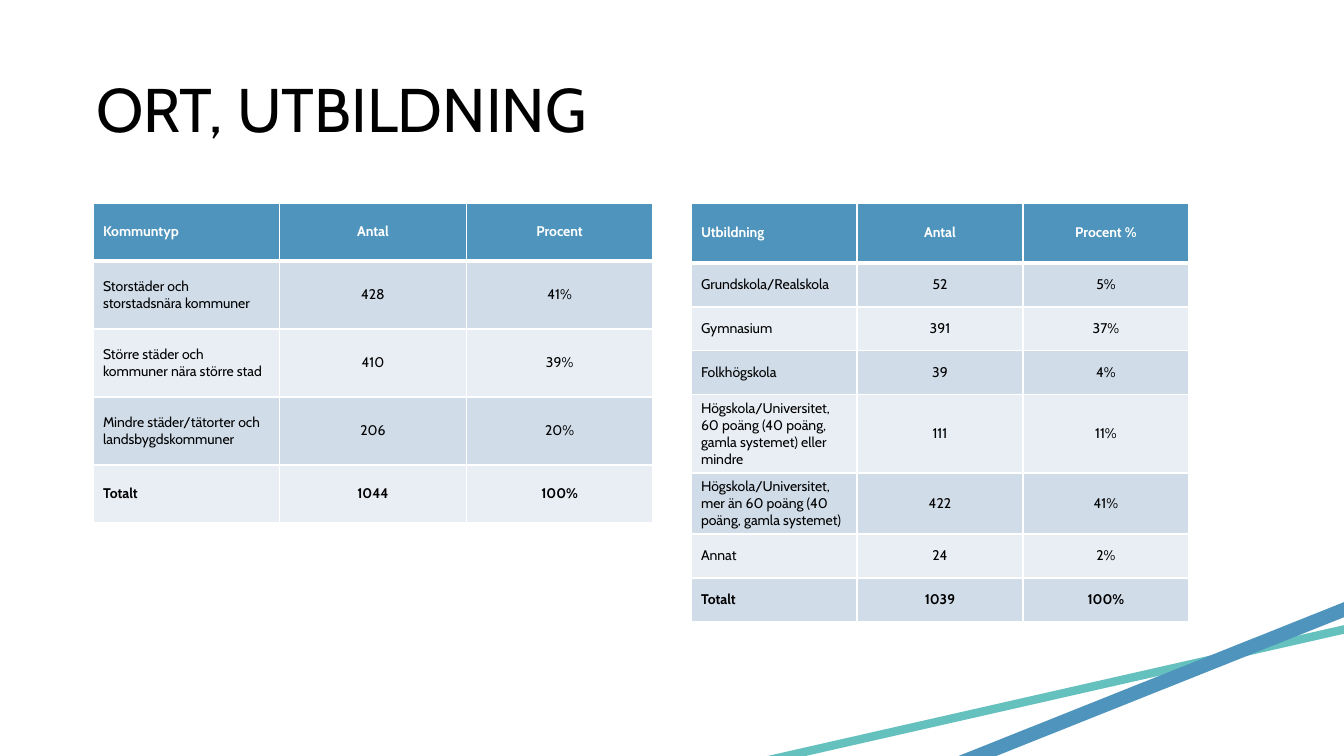
from dataclasses import dataclass

from lxml.etree import SubElement as Sub
from pptx import Presentation
from pptx.dml.color import RGBColor as RGB
from pptx.enum.shapes import MSO_CONNECTOR as Link
from pptx.enum.text import MSO_ANCHOR as Anchor, MSO_AUTO_SIZE as Fit, PP_ALIGN as Align
from pptx.oxml.ns import qn
from pptx.util import Emu, Pt

# Content
TITLE = "ORT, UTBILDNING"
TOWNS = [
    ("Kommuntyp", "Antal", "Procent"),
    ("Storstäder och storstadsnära kommuner", "428", "41%"),
    ("Större städer och kommuner nära större stad", "410", "39%"),
    ("Mindre städer/tätorter och landsbygdskommuner", "206", "20%"),
    ("Totalt", "1044", "100%"),
]
STUDIES = [
    ("Utbildning", "Antal", "Procent %"),
    ("Grundskola/Realskola", "52", "5%"),
    ("Gymnasium", "391", "37%"),
    ("Folkhögskola", "39", "4%"),
    ("Högskola/Universitet, 60 poäng (40 poäng, gamla systemet) eller mindre", "111", "11%"),
    ("Högskola/Universitet, mer än 60 poäng (40 poäng, gamla systemet)", "422", "41%"),
    ("Annat", "24", "2%"),
    ("Totalt", "1039", "100%"),
]


@dataclass(frozen=True)
class Theme:
    font: str = "Cabin"
    blue: str = "4E94BD"
    teal: str = "65C1BE"
    dark: str = "D0DCE8"
    light: str = "E9EEF4"
    white: str = "FFFFFF"
    black: str = "000000"
    head: int = 44
    body: int = 10


T = Theme()

# Layout in px: left, top, width, row heights
TABLES = [
    (TOWNS, 93, 203, 560, [58, 68, 68, 68, 58]),
    (STUDIES, 691, 203, 498, [60] + [44] * 7),
]
# Start, end, colour, weight in points
STRIPES = [
    ((672, 782), (1399, 617), T.teal, 6),
    ((797, 828), (1436, 573), T.blue, 10),
]
WIDE, HIGH = 1344, 756
SCALE = 12192000 / WIDE


def px(n):
    return Emu(round(n * SCALE))


def write(para, text, size, color, bold=False):
    run = para.add_run()
    run.text = text
    font = run.font
    font.name, font.size, font.bold = T.font, Pt(size), bold
    font.color.rgb = RGB.from_string(color)


def border(cell, row):
    props = cell._tc.get_or_add_tcPr()
    thick = {"T": row == 1, "B": row == 0}
    for side in "LRTB":
        width = Pt(3 if thick.get(side) else 1)
        line = Sub(props, qn("a:ln" + side), w=str(width))
        Sub(Sub(line, qn("a:solidFill")), qn("a:srgbClr"), val=T.white)


def stripe(slide, start, end, color, weight):
    line = slide.shapes.add_connector(Link.STRAIGHT, *map(px, start + end))
    line.line.color.rgb = RGB.from_string(color)
    line.line.width = Pt(weight)
    Sub(line._element.spPr, qn("a:effectLst"))


def grid(slide, data, left, top, width, heights):
    cols = len(data[0])
    box = map(px, (left, top, width, sum(heights)))
    table = slide.shapes.add_table(len(data), cols, *box).table
    for col in table.columns:
        col.width = px(width / cols)
    for r, (texts, height) in enumerate(zip(data, heights)):
        table.rows[r].height = px(height)
        first, last = r == 0, r == len(data) - 1
        fill = T.blue if first else (T.light, T.dark)[r % 2]
        for c, text in enumerate(texts):
            cell = table.cell(r, c)
            border(cell, r)
            cell.fill.solid()
            cell.fill.fore_color.rgb = RGB.from_string(fill)
            cell.vertical_anchor = Anchor.MIDDLE
            para = cell.text_frame.paragraphs[0]
            para.alignment = Align.CENTER if c else Align.LEFT
            write(para, text, T.body, T.white if first else T.black, first or last)


def main():
    deck = Presentation()
    deck.slide_width, deck.slide_height = px(WIDE), px(HIGH)
    slide = deck.slides.add_slide(deck.slide_layouts[5])

    # Corner stripes
    for item in STRIPES:
        stripe(slide, *item)

    # Title
    title = slide.shapes.title
    title.left, title.top, title.width, title.height = map(px, (86, 40, 1159, 146))
    frame = title.text_frame
    frame.word_wrap, frame.auto_size = True, Fit.NONE
    frame.vertical_anchor = Anchor.MIDDLE
    para = frame.paragraphs[0]
    para.alignment, para.line_spacing = Align.LEFT, 0.9
    write(para, TITLE, T.head, T.black)

    # Tables
    for item in TABLES:
        grid(slide, *item)

    deck.save("out.pptx")


if __name__ == "__main__":
    main()
